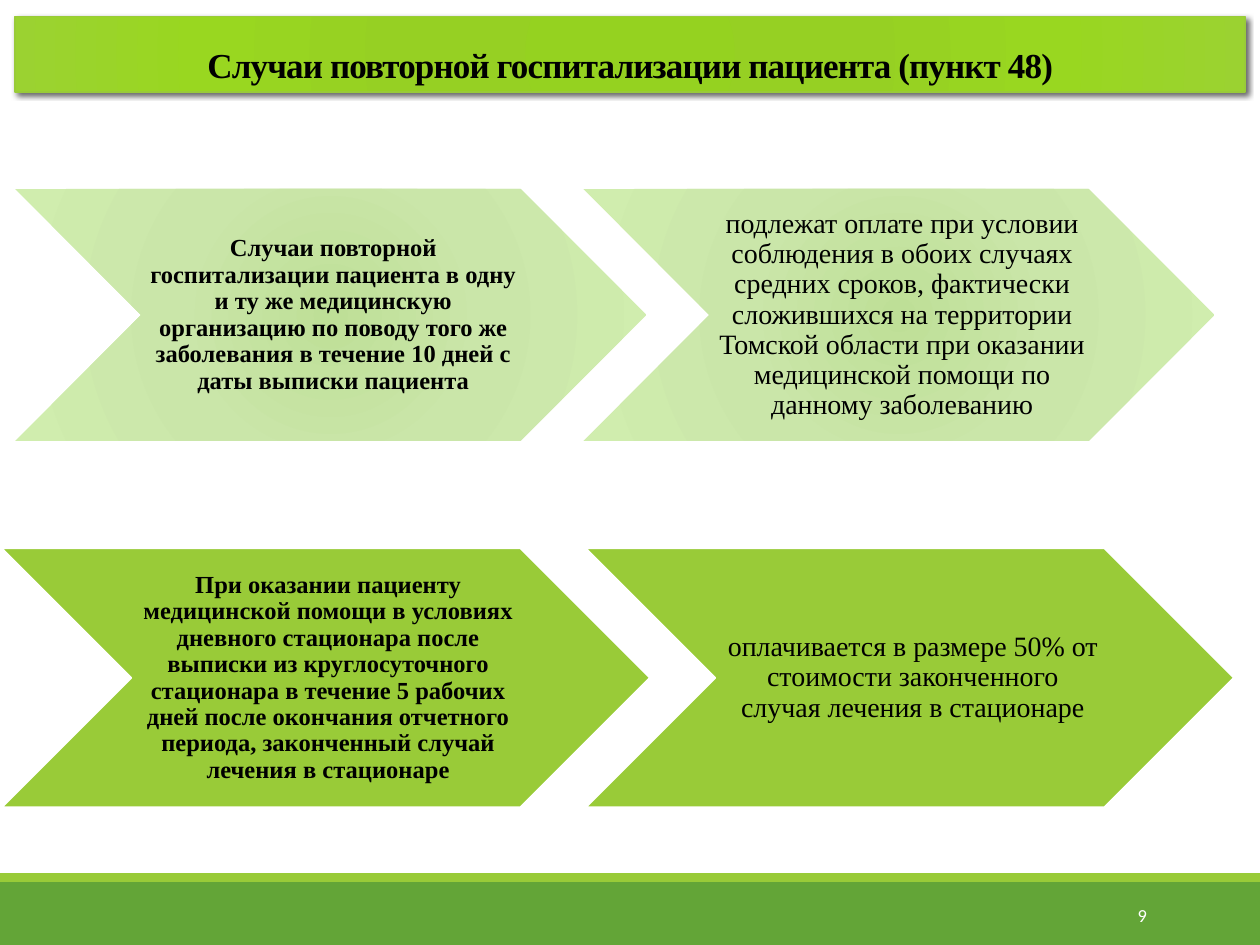
from dataclasses import dataclass
from lxml import etree
from pptx import Presentation
from pptx.dml.color import RGBColor
from pptx.enum.shapes import MSO_SHAPE
from pptx.enum.text import MSO_ANCHOR, MSO_AUTO_SIZE, PP_ALIGN
from pptx.oxml.ns import qn
from pptx.util import Inches, Pt

CHEVRON, RECTANGLE = MSO_SHAPE.CHEVRON, MSO_SHAPE.RECTANGLE
MIDDLE, BOTTOM = MSO_ANCHOR.MIDDLE, MSO_ANCHOR.BOTTOM
CENTER, RIGHT = PP_ALIGN.CENTER, PP_ALIGN.RIGHT
NO_AUTOFIT = MSO_AUTO_SIZE.NONE

SLIDE_WIDTH, SLIDE_HEIGHT = Inches(10), Inches(7.5)
COLUMN, ROW = SLIDE_WIDTH / 100, SLIDE_HEIGHT / 75
STEP_SHARE = 0.9


@dataclass(frozen=True)
class Theme:
    serif: str = "Times New Roman"
    sans: str = "Calibri"
    ink: str = "000000"
    white: str = "FFFFFF"
    lime: str = "99CB38"
    green: str = "63A537"
    banner_stops: tuple = ((0, "95D220"), (34, "96D023"), (70, "99D720"), (100, "9BD231"))
    pale_stops: tuple = ((0, "BEDF97"), (45, "CAE6A9"), (100, "D0EDAE"))
    title_size: float = 20
    case_size: float = 14
    payment_size: float = 16
    number_size: float = 10.5


THEME = Theme()


@dataclass(frozen=True)
class Box:
    left: float
    top: float
    width: float
    height: float

    def emu(self):
        return (round(self.left * COLUMN), round(self.top * ROW),
                round(self.width * COLUMN), round(self.height * ROW))


def child(parent, tag, **attributes):
    return etree.SubElement(parent, qn(tag), {key: str(value) for key, value in attributes.items()})


def fill_solid(part, color):
    part.fill.solid()
    part.fill.fore_color.rgb = RGBColor.from_string(color)


def fill_radial(part, stops):
    part.fill.gradient()
    gradient = part._element.spPr.find(qn("a:gradFill"))
    for old in list(gradient):
        gradient.remove(old)
    stop_list = child(gradient, "a:gsLst")
    for position, color in stops:
        child(child(stop_list, "a:gs", pos=position * 1000), "a:srgbClr", val=color)
    focus = child(gradient, "a:path", path="circle")
    child(focus, "a:fillToRect", l=100000, t=100000, r=100000, b=100000)


def outline(part, color, width):
    part.line.color.rgb = RGBColor.from_string(color)
    part.line.width = Pt(width)


def write(part, text, size, font, color, align, anchor, bold=False, spacing=1.0):
    frame = part.text_frame
    frame.word_wrap = True
    frame.auto_size = NO_AUTOFIT
    frame.vertical_anchor = anchor
    paragraph = frame.paragraphs[0]
    paragraph.alignment = align
    paragraph.line_spacing = spacing
    run = paragraph.add_run()
    run.text = text
    run.font.size = Pt(size)
    run.font.name = font
    run.font.bold = bold
    run.font.color.rgb = RGBColor.from_string(color)
    return run


def add_banner(slide, box, text):
    title = slide.shapes.title
    title.left, title.top, title.width, title.height = box.emu()
    fill_radial(title, THEME.banner_stops)
    outline(title, THEME.lime, 1)
    title.shadow.inherit = False
    effects = title._element.spPr.find(qn("a:effectLst"))
    shadow = child(effects, "a:outerShdw", blurRad=Pt(3), dist=Pt(2), dir=45 * 60000,
                   algn="tl", rotWithShape=0)
    child(child(shadow, "a:srgbClr", val=THEME.ink), "a:alpha", val=60000)
    run = write(title, text, THEME.title_size, THEME.serif, THEME.ink,
                CENTER, BOTTOM, bold=True, spacing=0.85)
    run.font._element.set("spc", "-50")


def add_case_row(slide, box, case, payment, paint):
    width = box.width / (1 + STEP_SHARE)
    statements = ((case, THEME.case_size, True, 0.06), (payment, THEME.payment_size, False, 0.07))
    for index, (text, size, bold, inset) in enumerate(statements):
        place = Box(box.left + index * STEP_SHARE * width, box.top, width, box.height)
        chevron = slide.shapes.add_shape(CHEVRON, *place.emu())
        chevron.shadow.inherit = False
        paint(chevron)
        frame = chevron.text_frame
        frame.margin_left = Inches(inset)
        frame.margin_top = frame.margin_right = frame.margin_bottom = Inches(0.02)
        write(chevron, text, size, THEME.serif, THEME.ink, CENTER, MIDDLE, bold, 0.9)


def paint_pale(chevron):
    fill_radial(chevron, THEME.pale_stops)
    chevron.line.fill.background()


def paint_lime(chevron):
    fill_solid(chevron, THEME.lime)
    outline(chevron, THEME.white, 1.25)


def add_footer(slide, box, number):
    stripe_height = 0.7
    stripe = Box(box.left, box.top, box.width, stripe_height)
    band = Box(box.left, box.top + stripe_height, box.width, box.height - stripe_height)
    for place, color in ((band, THEME.green), (stripe, THEME.lime)):
        bar = slide.shapes.add_shape(RECTANGLE, *place.emu())
        bar.shadow.inherit = False
        fill_solid(bar, color)
        bar.line.fill.background()
    number_place = Box(box.left + 0.812 * box.width, band.top + 0.6, 0.108 * box.width, 4)
    page_number = slide.shapes.add_textbox(*number_place.emu())
    write(page_number, number, THEME.number_size, THEME.sans, THEME.white, RIGHT, MIDDLE)


def main():
    presentation = Presentation()
    presentation.slide_width, presentation.slide_height = SLIDE_WIDTH, SLIDE_HEIGHT
    slide = presentation.slides.add_slide(presentation.slide_layouts[5])
    add_banner(slide, Box(1.2, 1.3, 97.6, 6), "Случаи повторной госпитализации пациента (пункт 48)")
    add_case_row(
        slide, Box(1.2, 15, 95.2, 20),
        "Случаи повторной госпитализации пациента в одну и ту же медицинскую организацию "
        "по поводу того же заболевания в течение 10 дней с даты выписки пациента",
        "подлежат оплате при условии соблюдения в обоих случаях средних сроков, фактически "
        "сложившихся на территории Томской области при оказании медицинской помощи "
        "по данному заболеванию",
        paint_pale)
    add_case_row(
        slide, Box(0.1, 43.5, 97.85, 20.6),
        "При оказании пациенту медицинской помощи в условиях дневного стационара после "
        "выписки из круглосуточного стационара в течение 5 рабочих дней после окончания "
        "отчетного периода, законченный случай лечения в стационаре",
        "оплачивается в размере 50% от стоимости законченного случая лечения в стационаре",
        paint_lime)
    add_footer(slide, Box(0, 69.3, 100, 5.7), "9")
    presentation.save("out.pptx")


if __name__ == "__main__":
    main()
